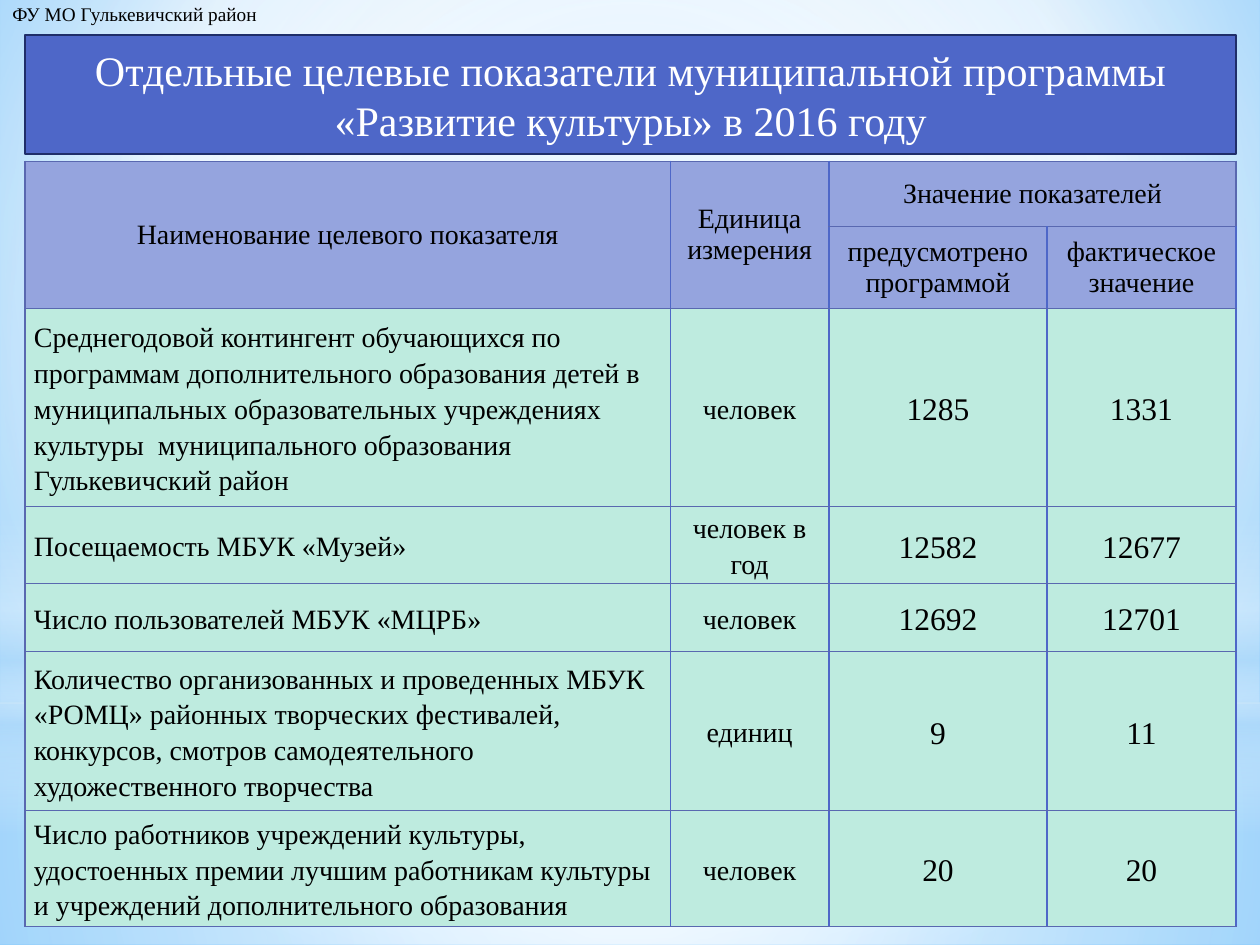
from lxml import etree
from pptx import Presentation
from pptx.dml.color import RGBColor
from pptx.enum.shapes import MSO_SHAPE
from pptx.enum.text import MSO_ANCHOR, MSO_AUTO_SIZE, PP_ALIGN
from pptx.oxml.ns import qn
from pptx.util import Inches, Pt

LEFT, CENTER = PP_ALIGN.LEFT, PP_ALIGN.CENTER
MIDDLE = MSO_ANCHOR.MIDDLE
RECTANGLE, OVAL = MSO_SHAPE.RECTANGLE, MSO_SHAPE.OVAL

FONT = "Times New Roman"
BLACK, WHITE = "000000", "FFFFFF"
BLUE, NAVY = "4E67C8", "1F2E69"
PALE_BLUE = "B4DCFA"
HEADER_FILL, BODY_FILL = "95A4DE", "BEEBDF"
COLUMN_LINE, ROW_LINE = BLUE, "5968B0"

CENTER_FOCUS = (50, 50, 50, 50)
BACKGROUND_STOPS = [(0, "9ED5FF", 100), (60, WHITE, 100), (100, "5BB9FF", 100)]
GLOWS = [
    (RECTANGLE, (0, 5.58, 10, 1.92), CENTER_FOCUS,
     [(0, WHITE, 91), (37, WHITE, 76), (100, PALE_BLUE, 79)]),
    (RECTANGLE, (0, 0, 10, 5.58), CENTER_FOCUS,
     [(0, WHITE, 89), (48, WHITE, 62), (100, PALE_BLUE, 79)]),
    (RECTANGLE, (0, 4.12, 10, 2.5), None,
     [(0, WHITE, 0), (29, WHITE, 30), (45, PALE_BLUE, 40),
      (55, WHITE, 26), (65, PALE_BLUE, 60), (100, WHITE, 0)]),
    (OVAL, (0, 1.75, 10, 5.58), CENTER_FOCUS, [(0, WHITE, 100), (56, WHITE, 0)]),
]

COLUMN_WIDTHS = [5.12, 1.26, 1.73, 1.5]
ROW_HEIGHTS = [0.52, 0.65, 1.57, 0.61, 0.54, 1.26, 0.92]
HEADER_ROWS = [
    ["Наименование целевого показателя", "Единица\nизмерения",
     "Значение показателей", ""],
    ["", "", "предусмотрено программой", "фактическое значение"],
]
HEADER_MERGES = [((0, 0), (1, 0)), ((0, 1), (1, 1)), ((0, 2), (0, 3))]
INDICATORS = [
    ["Среднегодовой контингент обучающихся по программам дополнительного "
     "образования детей в муниципальных образовательных учреждениях культуры  "
     "муниципального образования Гулькевичский район", "человек", "1285", "1331"],
    ["Посещаемость МБУК «Музей»", "человек в год", "12582", "12677"],
    ["Число пользователей МБУК «МЦРБ»", "человек", "12692", "12701"],
    ["Количество организованных и проведенных МБУК «РОМЦ» районных творческих "
     "фестивалей, конкурсов, смотров самодеятельного художественного творчества",
     "единиц", "9", "11"],
    ["Число работников учреждений культуры, удостоенных премии лучшим работникам "
     "культуры и учреждений дополнительного образования", "человек", "20", "20"],
]


def rgb(value):
    return RGBColor.from_string(value)


def set_attributes(target, values):
    for name, value in values.items():
        setattr(target, name, value)


def place(shape, box):
    names = ("left", "top", "width", "height")
    set_attributes(shape, {name: Inches(size) for name, size in zip(names, box)})


def add_color(parent, color, opacity=100):
    node = etree.SubElement(parent, qn("a:srgbClr"), val=color)
    if opacity < 100:
        etree.SubElement(node, qn("a:alpha"), val=str(opacity * 1000))


def set_gradient(owner, fill, stops, focus):
    """Fill with stops of (position, colour, opacity); no focus means top to bottom."""
    fill.background()
    empty_fill = owner.element.find(".//" + qn("a:noFill"))
    gradient = etree.Element(qn("a:gradFill"), rotWithShape="1")
    stop_list = etree.SubElement(gradient, qn("a:gsLst"))
    for position, color, opacity in stops:
        stop = etree.SubElement(stop_list, qn("a:gs"), pos=str(position * 1000))
        add_color(stop, color, opacity)
    if focus:
        circle = etree.SubElement(gradient, qn("a:path"))
        circle.set("path", "circle")
        edges = {edge: str(inset * 1000) for edge, inset in zip("ltrb", focus)}
        etree.SubElement(circle, qn("a:fillToRect"), edges)
    else:
        etree.SubElement(gradient, qn("a:lin"), ang="5400000", scaled="0")
    empty_fill.getparent().replace(empty_fill, gradient)


def write_text(frame, text, size, color=BLACK, **paragraph_format):
    frame.text = text
    for paragraph in frame.paragraphs:
        set_attributes(paragraph, paragraph_format)
        for run in paragraph.runs:
            set_attributes(run.font, {"name": FONT, "size": Pt(size)})
            run.font.color.rgb = rgb(color)


def add_glow(slide, kind, box, focus, stops):
    shape = slide.shapes.add_shape(kind, *map(Inches, box))
    shape.shadow.inherit = False
    set_gradient(shape, shape.fill, stops, focus)
    shape.line.fill.background()


def add_owner_label(slide):
    label = slide.shapes.add_textbox(*map(Inches, (0, -0.03, 2.18, 0.29)))
    label.text_frame.word_wrap = False
    write_text(label.text_frame, "ФУ МО Гулькевичский район", 11)


def format_title(slide):
    title = slide.shapes.title
    place(title, (0.2, 0.28, 9.61, 0.94))
    outline = etree.Element(qn("a:prstGeom"), prst="roundRect")
    etree.SubElement(outline, qn("a:avLst"))
    title.element.spPr.find(qn("a:xfrm")).addnext(outline)
    title.fill.solid()
    title.fill.fore_color.rgb = rgb(BLUE)
    title.line.color.rgb = rgb(NAVY)
    title.line.width = Pt(1.25)
    set_attributes(title.text_frame, {
        "word_wrap": True, "auto_size": MSO_AUTO_SIZE.NONE, "vertical_anchor": MIDDLE})
    write_text(title.text_frame, "Отдельные целевые показатели муниципальной "
               "программы «Развитие культуры» в 2016 году", 24, WHITE, alignment=CENTER)


def set_borders(cell, left, right):
    properties = cell._tc.get_or_add_tcPr()
    colors = {"lnL": left, "lnR": right, "lnT": ROW_LINE, "lnB": ROW_LINE}
    for index, (side, color) in enumerate(colors.items()):
        line = etree.Element(qn("a:" + side), w=str(Pt(1)))
        add_color(etree.SubElement(line, qn("a:solidFill")), color)
        properties.insert(index, line)


def format_cell(cell, text, row, column):
    is_header = row < len(HEADER_ROWS)
    cell.vertical_anchor = MIDDLE
    cell.fill.solid()
    cell.fill.fore_color.rgb = rgb(HEADER_FILL if is_header else BODY_FILL)
    set_borders(cell, COLUMN_LINE if column else ROW_LINE,
                ROW_LINE if row == 0 and column >= 2 else COLUMN_LINE)
    if is_header:
        write_text(cell.text_frame, text, 16, alignment=CENTER)
        return
    set_attributes(cell, {"margin_left": Inches(0.07), "margin_right": Inches(0.07),
                          "margin_top": 0, "margin_bottom": 0})
    write_text(cell.text_frame, text, 18 if column >= 2 else 16,
               alignment=CENTER if column else LEFT, line_spacing=1.15)


def add_indicator_table(slide):
    rows = HEADER_ROWS + INDICATORS
    box = (0.2, 1.28, sum(COLUMN_WIDTHS), sum(ROW_HEIGHTS))
    table = slide.shapes.add_table(
        len(rows), len(COLUMN_WIDTHS), *map(Inches, box)).table
    for column, width in zip(table.columns, COLUMN_WIDTHS):
        column.width = Inches(width)
    for row, height in zip(table.rows, ROW_HEIGHTS):
        row.height = Inches(height)
    for row, texts in enumerate(rows):
        for column, text in enumerate(texts):
            format_cell(table.cell(row, column), text, row, column)
    for first, last in HEADER_MERGES:
        table.cell(*first).merge(table.cell(*last))


def main():
    presentation = Presentation()
    presentation.slide_width, presentation.slide_height = Inches(10), Inches(7.5)
    slide = presentation.slides.add_slide(presentation.slide_layouts[5])
    set_gradient(slide, slide.background.fill, BACKGROUND_STOPS, (20, 10, 20, 60))
    for glow in GLOWS:
        add_glow(slide, *glow)
    add_owner_label(slide)
    add_indicator_table(slide)
    format_title(slide)
    slide.shapes.element.append(slide.shapes.title.element)  # bring to front
    presentation.save("out.pptx")


if __name__ == "__main__":
    main()
